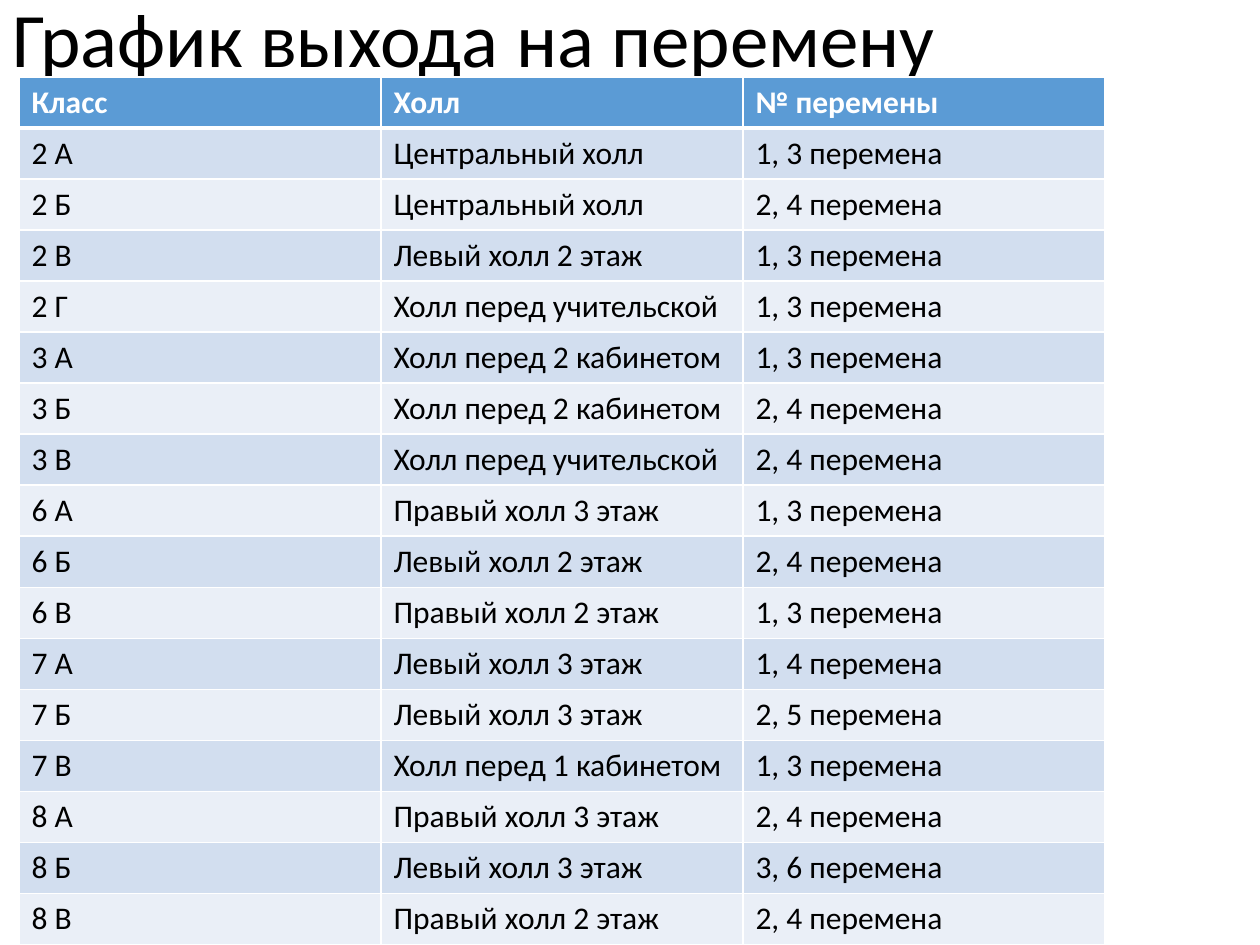
from dataclasses import dataclass

from lxml.etree import SubElement
from pptx import Presentation
from pptx.dml.color import RGBColor
from pptx.enum.text import MSO_ANCHOR
from pptx.oxml.ns import qn
from pptx.util import Inches, Pt


@dataclass(frozen=True)
class Theme:
    font: str = "Calibri"
    title_size: int = 44
    table_size: int = 18
    text: str = "000000"
    header_text: str = "FFFFFF"
    header_fill: str = "5B9BD5"
    bands: tuple = ("D2DEEF", "EAEFF7")
    border: str = "FFFFFF"
    thin: int = 1
    thick: int = 3


HEADINGS = ("Класс", "Холл", "№ перемены")
SCHEDULE = (
    ("2 А", "Центральный холл", "1, 3"),
    ("2 Б", "Центральный холл", "2, 4"),
    ("2 В", "Левый холл 2 этаж", "1, 3"),
    ("2 Г", "Холл перед учительской", "1, 3"),
    ("3 А", "Холл перед 2 кабинетом", "1, 3"),
    ("3 Б", "Холл перед 2 кабинетом", "2, 4"),
    ("3 В", "Холл перед учительской", "2, 4"),
    ("6 А", "Правый холл 3 этаж", "1, 3"),
    ("6 Б", "Левый холл 2 этаж", "2, 4"),
    ("6 В", "Правый холл 2 этаж", "1, 3"),
    ("7 А", "Левый холл 3 этаж", "1, 4"),
    ("7 Б", "Левый холл 3 этаж", "2, 5"),
    ("7 В", "Холл перед 1 кабинетом", "1, 3"),
    ("8 А", "Правый холл 3 этаж", "2, 4"),
    ("8 Б", "Левый холл 3 этаж", "3, 6"),
    ("8 В", "Правый холл 2 этаж", "2, 4"),
)


class SlideBuilder:
    def __init__(self, slide, theme):
        self.slide = slide
        self.theme = theme

    def set_text(self, frame, words, color, **formats):
        paragraph = frame.paragraphs[0]
        paragraph.text = words
        font = paragraph.runs[0].font
        for attribute, value in {"name": self.theme.font, **formats}.items():
            setattr(font, attribute, value)
        font.color.rgb = RGBColor.from_string(color)
        return paragraph

    def title(self, words, left, top, width, height):
        frame = self.slide.shapes.add_textbox(
            Inches(left), Inches(top), Inches(width), Inches(height)).text_frame
        frame.word_wrap = True
        frame.vertical_anchor = MSO_ANCHOR.MIDDLE
        heading = self.set_text(frame, words, self.theme.text, size=Pt(self.theme.title_size))
        heading.line_spacing = 0.9

    def borders(self, cell, **widths):
        """Draw the cell's edges, thin unless a width is given for a side."""
        properties = cell._tc.get_or_add_tcPr()
        for side in "LRTB":
            width = widths.get(side, self.theme.thin)
            line = SubElement(properties, qn(f"a:ln{side}"), w=str(Pt(width)))
            fill = SubElement(line, qn("a:solidFill"))
            SubElement(fill, qn("a:srgbClr"), val=self.theme.border)

    def table(self, rows, left, top, width, height):
        theme = self.theme
        grid = self.slide.shapes.add_table(
            len(rows), len(rows[0]),
            Inches(left), Inches(top), Inches(width), Inches(height)).table
        for row_index, row in enumerate(rows):
            is_header = row_index == 0
            fill = theme.header_fill if is_header else theme.bands[(row_index - 1) % 2]
            color = theme.header_text if is_header else theme.text
            edges = {0: {"B": theme.thick}, 1: {"T": theme.thick}}.get(row_index, {})
            for column_index, words in enumerate(row):
                cell = grid.cell(row_index, column_index)
                self.borders(cell, **edges)
                cell.fill.solid()
                cell.fill.fore_color.rgb = RGBColor.from_string(fill)
                self.set_text(cell.text_frame, words, color,
                              size=Pt(theme.table_size), bold=is_header)


def main():
    deck = Presentation()
    deck.slide_width, deck.slide_height = Inches(10), Inches(7.5)
    builder = SlideBuilder(deck.slides.add_slide(deck.slide_layouts[6]), Theme())
    builder.title("График выхода на перемену", 0, -0.12, 7.62, 0.91)
    rows = [HEADINGS] + [(group, hall, f"{breaks} перемена")
                         for group, hall, breaks in SCHEDULE]
    builder.table(rows, 0.15, 0.61, 8.62, 6.89)
    deck.save("out.pptx")


if __name__ == "__main__":
    main()
